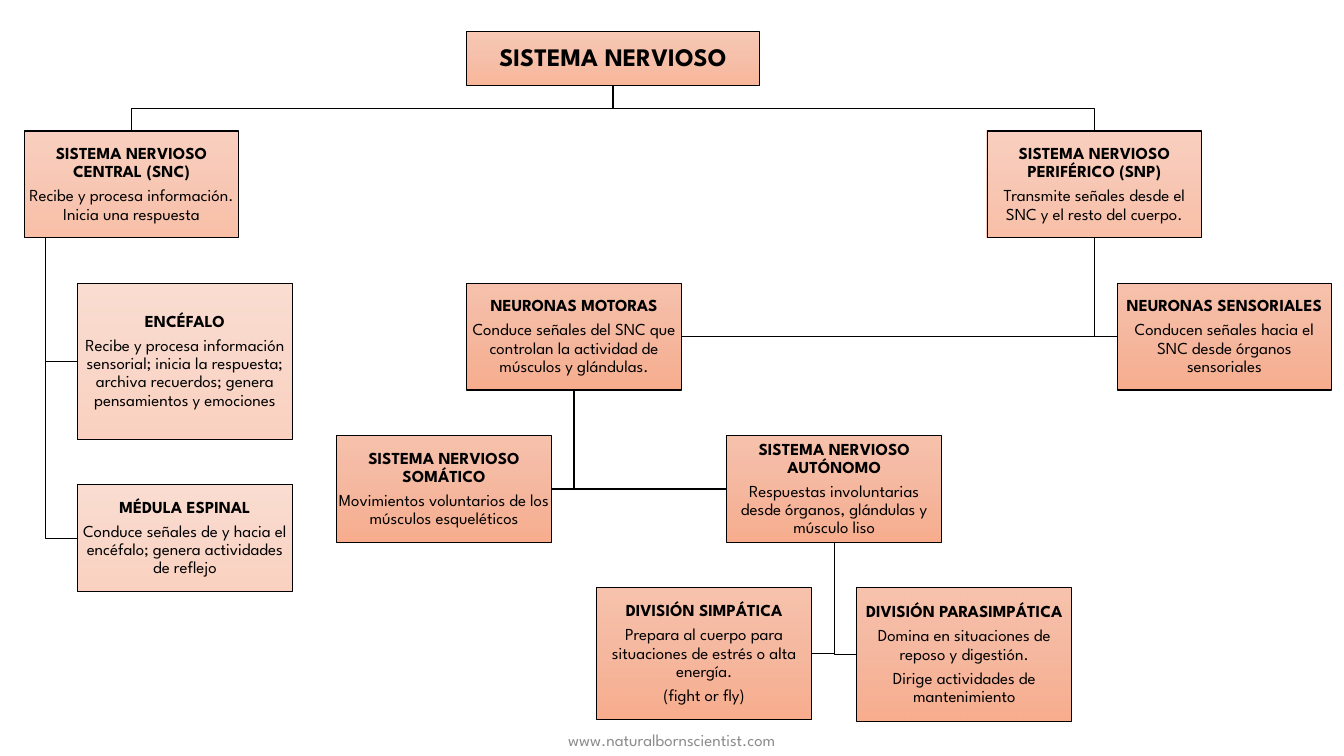
"""Builds a one-slide concept map of the nervous system."""
from copy import deepcopy

from lxml.etree import SubElement
from pptx import Presentation
from pptx.dml.color import RGBColor
from pptx.enum.shapes import MSO_SHAPE
from pptx.enum.text import MSO_ANCHOR, MSO_AUTO_SIZE, PP_ALIGN
from pptx.oxml.ns import qn
from pptx.util import Inches, Pt

BLACK = RGBColor(0x00, 0x00, 0x00)
GRAY = RGBColor(0x8C, 0x8C, 0x8C)
PEACH = [(0, RGBColor(0xF7, 0xBD, 0xA5)), (0.5, RGBColor(0xF5, 0xB1, 0x96)),
         (1, RGBColor(0xF8, 0xA5, 0x82))]
FONT = "League Spartan"

TITLE = "SISTEMA NERVIOSO"
FOOTER = "www.naturalbornscientist.com"
SLIDE_W, SLIDE_H = 13.33, 7.5
BOX_W, BOX_H, GAP = 2.13, 1.06, 0.45
COL, ROW = (BOX_W + GAP) / 2, BOX_H + GAP
GRID_X, GRID_Y = 3.34, 1.3
SNC_X, BRANCH_X = 0.24, 0.77
TRUNK = 0.1
FOOTER_W, FOOTER_H = 4.5, 0.3

# name: left, row, height, opacity, paragraphs
BOXES = {
    "snc": (SNC_X, 0, BOX_H, 70, [
        "SISTEMA NERVIOSO CENTRAL (SNC)",
        "Recibe y procesa información. Inicia una respuesta"]),
    "encefalo": (BRANCH_X, 1, 1.55, 50, [
        "ENCÉFALO",
        "Recibe y procesa información sensorial; inicia la respuesta; "
        "archiva recuerdos; genera pensamientos y emociones"]),
    "medula": (BRANCH_X, 1 + (1.55 + GAP) / ROW, BOX_H, 50, [
        "MÉDULA ESPINAL",
        "Conduce señales de y hacia el encéfalo; genera actividades de reflejo"]),
    "snp": (GRID_X + 5 * COL, 0, BOX_H, 70, [
        "SISTEMA NERVIOSO PERIFÉRICO (SNP)",
        "Transmite señales desde el SNC y el resto del cuerpo."]),
    "motoras": (GRID_X + COL, 1, BOX_H, 90, [
        "NEURONAS MOTORAS",
        "Conduce señales del SNC que controlan la actividad de músculos y glándulas."]),
    "somatico": (GRID_X, 2, BOX_H, 90, [
        "SISTEMA NERVIOSO SOMÁTICO",
        "Movimientos voluntarios de los músculos esqueléticos"]),
    "autonomo": (GRID_X + 3 * COL, 2, BOX_H, 90, [
        "SISTEMA NERVIOSO AUTÓNOMO",
        "Respuestas involuntarias desde órganos, glándulas y músculo liso"]),
    "simpatica": (GRID_X + 2 * COL, 3, 1.31, 90, [
        "DIVISIÓN SIMPÁTICA",
        "Prepara al cuerpo para situaciones de estrés o alta energía.",
        "(fight or fly)"]),
    "parasimpatica": (GRID_X + 4 * COL, 3, 1.33, 90, [
        "DIVISIÓN PARASIMPÁTICA",
        "Domina en situaciones de reposo y digestión.",
        "Dirige actividades de mantenimiento"]),
    "sensoriales": (GRID_X + 6 * COL, 1, BOX_H, 90, [
        "NEURONAS SENSORIALES",
        "Conducen señales hacia el SNC desde órganos sensoriales"]),
}
# parent: where the trunk leaves it as a share of its width, children
LINKS = {
    "snc": (TRUNK, ["encefalo", "medula"]),
    "snp": (0.5, ["motoras", "sensoriales"]),
    "motoras": (0.5, ["somatico", "autonomo"]),
    "autonomo": (0.5, ["simpatica", "parasimpatica"]),
}


def place(sp, left, top, width, height):
    for name, value in dict(left=left, top=top, width=width, height=height).items():
        setattr(sp, name, Inches(value))


def write(sp, paragraphs, size, color=BLACK, heading=True):
    tf = sp.text_frame
    tf.auto_size = MSO_AUTO_SIZE.NONE
    tf.word_wrap = True
    tf.vertical_anchor = MSO_ANCHOR.MIDDLE
    for side in ("left", "top", "right", "bottom"):
        setattr(tf, f"margin_{side}", Inches(0.01))
    for i, text in enumerate(paragraphs):
        p = tf.paragraphs[0] if i == 0 else tf.add_paragraph()
        style = dict(alignment=PP_ALIGN.CENTER, line_spacing=0.9,
                     space_before=Pt(0), space_after=Pt(0.35 * size))
        for name, value in style.items():
            setattr(p, name, value)
        r = p.add_run()
        r.text = text
        for name, value in dict(name=FONT, size=Pt(size), bold=heading and i == 0).items():
            setattr(r.font, name, value)
        r.font.color.rgb = color


def paint(sp, opacity):
    sp.fill.gradient()
    sp.fill.gradient_angle = 270
    stops = sp._element.spPr.find(qn("a:gradFill")).find(qn("a:gsLst"))
    stops.insert(1, deepcopy(stops[0]))
    for stop, gs, (position, color) in zip(sp.fill.gradient_stops, stops, PEACH):
        stop.position = position
        stop.color.rgb = color
        SubElement(gs[0], qn("a:alpha"), val=str(opacity * 1000))
    sp.line.color.rgb = BLACK
    sp.line.width = Pt(0.75)


def draw_link(slide, points):
    start, *rest = [(Inches(x), Inches(y)) for x, y in points]
    builder = slide.shapes.build_freeform(*start)
    builder.add_line_segments(rest, close=False)
    sp = builder.convert_to_shape()
    sp.shadow.inherit = False
    sp.fill.background()
    sp.line.color.rgb = BLACK
    sp.line.width = Pt(1)


def main():
    prs = Presentation()
    prs.slide_width, prs.slide_height = Inches(SLIDE_W), Inches(SLIDE_H)
    slide = prs.slides.add_slide(prs.slide_layouts[5])

    areas = {name: (x, GRID_Y + row * ROW, BOX_W, h)
             for name, (x, row, h, _, _) in BOXES.items()}

    centers = [areas[name][0] + BOX_W / 2 for name in ("snc", "snp")]
    middle, title_w, title_h = sum(centers) / 2, 2.9, 0.54
    title_bottom = GRID_Y - GAP
    title = slide.shapes.title
    place(title, middle - title_w / 2, title_bottom - title_h, title_w, title_h)
    paint(title, 80)
    write(title, [TITLE], 18)

    bend = GRID_Y - GAP / 2
    for x in centers:
        draw_link(slide, [(middle, title_bottom), (middle, bend), (x, bend), (x, GRID_Y)])
    for parent, (share, children) in LINKS.items():
        left, top, width, height = areas[parent]
        trunk = left + share * width
        for child in children:
            x, y, w, h = areas[child]
            edge = x if x > trunk else x + w
            draw_link(slide, [(trunk, top + height), (trunk, y + h / 2), (edge, y + h / 2)])

    for name, (_, _, _, opacity, paragraphs) in BOXES.items():
        sp = slide.shapes.add_shape(MSO_SHAPE.RECTANGLE, *map(Inches, areas[name]))
        sp.shadow.inherit = False
        paint(sp, opacity)
        write(sp, paragraphs, 12)

    footer_area = ((SLIDE_W - FOOTER_W) / 2, SLIDE_H - FOOTER_H, FOOTER_W, FOOTER_H)
    footer = slide.shapes.add_textbox(*map(Inches, footer_area))
    write(footer, [FOOTER], 12, GRAY, heading=False)
    prs.save("out.pptx")


if __name__ == "__main__":
    main()
